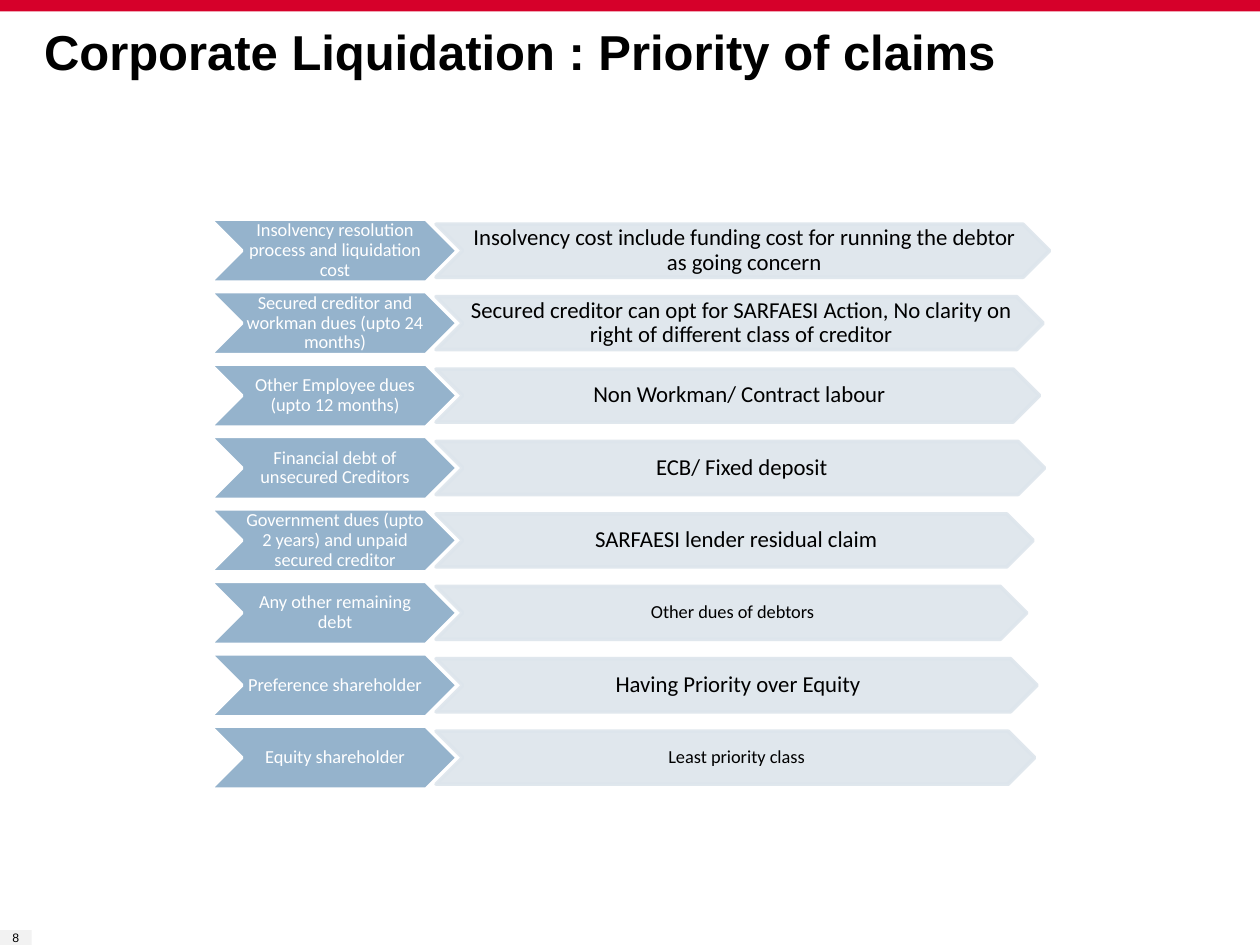
"""Build a slide that ranks the claims in a corporate liquidation."""
from lxml.etree import SubElement
from pptx import Presentation
from pptx.dml.color import RGBColor
from pptx.enum.shapes import MSO_SHAPE
from pptx.enum.text import MSO_ANCHOR, PP_ALIGN
from pptx.oxml.ns import qn
from pptx.util import Cm, Pt

RED = RGBColor(0xD6, 0x00, 0x2A)
GREY = RGBColor(0xF2, 0xF2, 0xF2)
STEEL = RGBColor(0x95, 0xB3, 0xCC)
MIST = RGBColor(0xDD, 0xE5, 0xEC)
WHITE = RGBColor(0xFF, 0xFF, 0xFF)
BLACK = RGBColor(0x00, 0x00, 0x00)

FIRST_ROW_TOP, ROW_PITCH = 4.42, 1.46
CLAIM_LEFT, CLAIM_WIDTH, CLAIM_HEIGHT = 4.24, 4.98, 1.27
REMARK_LEFT, REMARK_HEIGHT = 8.79, 1.07

CLAIMS = [
    ("Insolvency resolution process and liquidation cost",
     "Insolvency cost include funding cost for running the debtor as going concern", 12.37, 13),
    ("Secured creditor and workman dues (upto 24 months)",
     "Secured creditor can opt for SARFAESI Action, No clarity on right of different class of creditor",
     12.24, 13),
    ("Other Employee dues (upto 12 months)", "Non Workman/ Contract labour", 12.17, 13),
    ("Financial debt of unsecured Creditors", "ECB/ Fixed deposit", 12.27, 13),
    ("Government dues (upto 2 years) and unpaid secured creditor",
     "SARFAESI lender residual claim", 12.04, 13),
    ("Any other remaining debt", "Other dues of debtors", 11.91, 10.5),
    ("Preference shareholder", "Having Priority over Equity", 12.12, 13),
    ("Equity shareholder", "Least priority class", 12.07, 10.5),
]


class SlideBuilder:
    heading_font = "Arial"
    body_font = "Calibri"

    def __init__(self, slide):
        self.slide = slide

    def label(self, shape, text, font, size, color, spacing=1.0, align=PP_ALIGN.CENTER,
              anchor=MSO_ANCHOR.TOP, margins=(0, 0, 0, 0), bold=False):
        frame = shape.text_frame
        frame.word_wrap = True
        frame.vertical_anchor = anchor
        frame.margin_left, frame.margin_top, frame.margin_right, frame.margin_bottom = map(Cm, margins)
        frame.text = text
        paragraph = frame.paragraphs[0]
        paragraph.alignment = align
        paragraph.line_spacing = spacing
        style = paragraph.runs[0].font
        style.name, style.size, style.bold = font, Pt(size), bold
        style.color.rgb = color

    def title(self, text, left, top, width, height):
        box = self.slide.shapes.add_textbox(Cm(left), Cm(top), Cm(width), Cm(height))
        self.label(box, text, self.heading_font, 28, BLACK, 0.85, PP_ALIGN.LEFT, bold=True)

    def block(self, left, top, width, height, fill, kind=MSO_SHAPE.RECTANGLE):
        shape = self.slide.shapes.add_shape(kind, Cm(left), Cm(top), Cm(width), Cm(height))
        shape.shadow.inherit = False
        shape.fill.solid()
        shape.fill.fore_color.rgb = fill
        shape.line.fill.background()
        return shape

    def page_number(self, text, left, top, width, height):
        badge = self.block(left, top, width, height, GREY)
        self.label(badge, text, self.heading_font, 7, BLACK)

    def chevron(self, text, left, top, width, height, fill, outline, size, color, opacity=100):
        shape = self.block(left, top, width, height, fill, MSO_SHAPE.CHEVRON)
        shape.line.color.rgb = outline
        shape.line.width = Pt(2)
        if opacity < 100:
            for tint in shape._element.spPr.iter(qn("a:srgbClr")):
                SubElement(tint, qn("a:alpha")).set("val", str(opacity * 1000))
        self.label(shape, text, self.body_font, size, color, 0.9,
                   anchor=MSO_ANCHOR.MIDDLE, margins=(0.05, 0.02, 0, 0.02))


def main():
    presentation = Presentation()
    presentation.slide_width, presentation.slide_height = Cm(25.4), Cm(19.05)
    builder = SlideBuilder(presentation.slides.add_slide(presentation.slide_layouts[6]))

    builder.block(0, 0, 25.4, 0.23, RED)
    builder.page_number("8", 0, 18.75, 0.64, 0.46)
    builder.title("Corporate Liquidation : Priority of claims", 0.89, 0.61, 22.56, 2.21)

    for rank, (claim, remark, remark_width, remark_size) in enumerate(CLAIMS):
        top = FIRST_ROW_TOP + rank * ROW_PITCH
        builder.chevron(claim, CLAIM_LEFT, top, CLAIM_WIDTH, CLAIM_HEIGHT,
                        STEEL, WHITE, 10.5, WHITE)
        builder.chevron(remark, REMARK_LEFT, top + (CLAIM_HEIGHT - REMARK_HEIGHT) / 2,
                        remark_width, REMARK_HEIGHT, MIST, MIST, remark_size, BLACK, 90)

    presentation.save("out.pptx")


if __name__ == "__main__":
    main()
